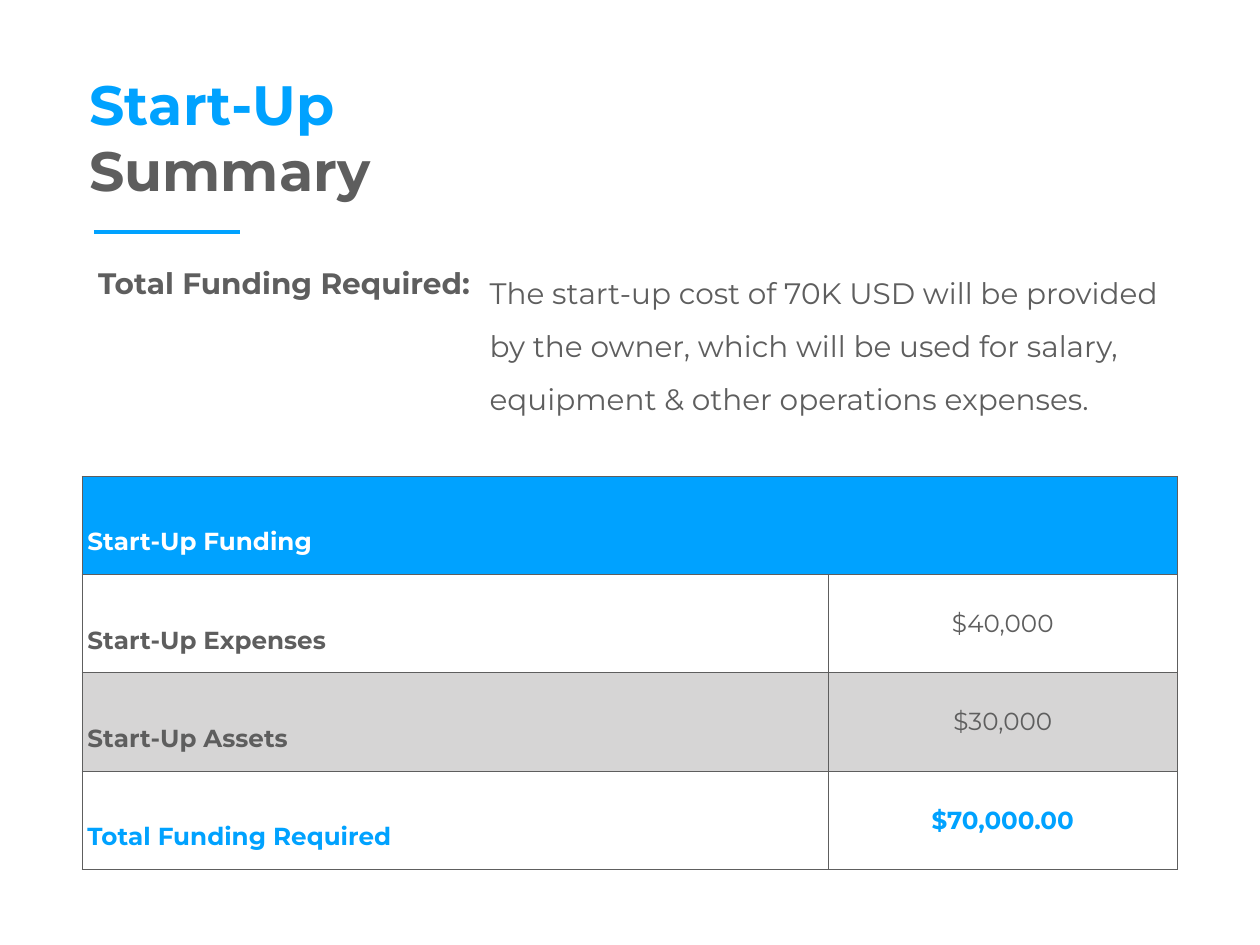
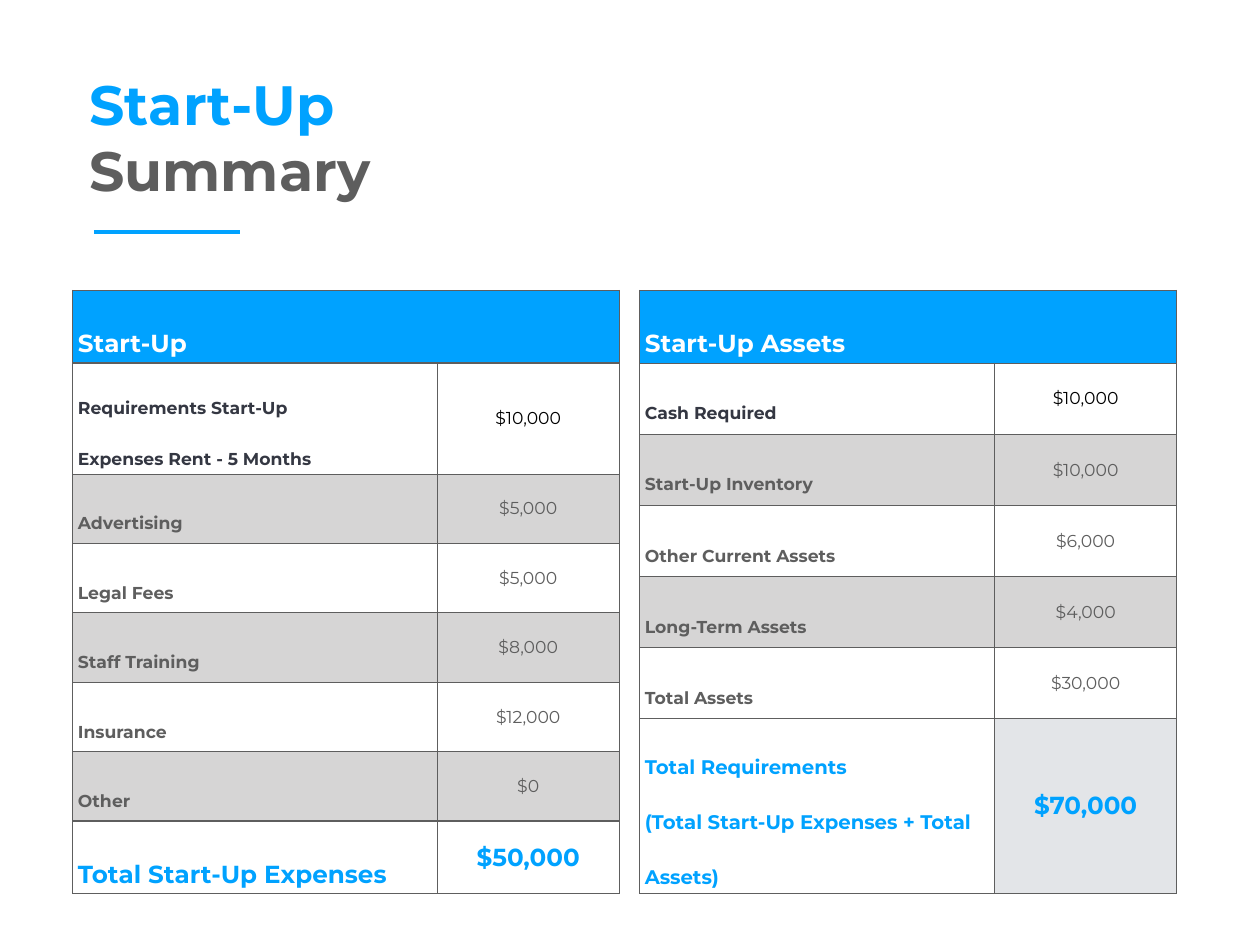
import copy
from pptx import Presentation
from pptx import util as u
from pptx.dml.color import RGBColor
from pptx.enum import shapes, text
from pptx.oxml import parse_xml
from pptx.oxml.ns import nsdecls, qn

HUES = {"blue": "00A2FF", "gray": "5E5E5E", "band": "D6D5D5", "tint": "E3E5E8",
        "white": "FFFFFF", "navy": "343742", "black": "000000"}
FACE = "Montserrat"
COLS, ROWS = 128, 96
PAD = u.Inches(0.06)
LEAD = {20: 2.1, 16: 2.31, 14: 2.43}


def hue(name):
    return RGBColor.from_string(HUES[name])


def write(para, words, size=20, color="gray", bold=False, lead=None, center=False):
    """Fill one paragraph with formatted text."""
    para.text = words
    if lead:
        para.line_spacing = lead
    if center:
        para.alignment = text.PP_ALIGN.CENTER
    for run in para.runs:
        font = run.font
        font.name, font.size, font.bold = FACE, u.Pt(size), bold
        font.color.rgb = hue(color)
    for gap in para._p.findall(qn("a:br")):
        gap.append(copy.deepcopy(para.runs[0]._r.rPr))


def border(cell, skip=""):
    """Rule the four sides of a cell, leaving out the skipped side."""
    for side in "LRTB":
        paint = "<a:noFill/>" if side == skip else (
            f'<a:solidFill><a:srgbClr val="{HUES["gray"]}"/></a:solidFill>')
        cell._tc.get_or_add_tcPr().append(parse_xml(
            f'<a:ln{side} {nsdecls("a")} w="12700">{paint}</a:ln{side}>'))


class Deck:
    """Shared style and the current slide."""

    def __init__(self):
        self.show = Presentation()
        self.show.slide_width = u.Inches(14.22)
        self.show.slide_height = u.Inches(10.67)
        self.page = None

    def x(self, cols):
        return round(self.show.slide_width * cols / COLS)

    def y(self, rows):
        return round(self.show.slide_height * rows / ROWS)

    def slide(self):
        self.page = self.show.slides.add_slide(self.show.slide_layouts[6]).shapes
        self.box(8.55, 6.5, 29.7, 14.75, ("Start-Up", dict(size=45, color="blue", bold=True)),
                 ("Summary", dict(size=45, bold=True)))
        self.rule(9.55, 24.4, 23.6)

    def box(self, left, top, wide, high, *lines):
        frame = self.page.add_textbox(self.x(left), self.y(top),
                                      self.x(wide), self.y(high)).text_frame
        frame.word_wrap = True
        frame.vertical_anchor = text.MSO_ANCHOR.MIDDLE
        frame.margin_left = frame.margin_right = PAD
        frame.margin_top = frame.margin_bottom = PAD
        for i, (words, form) in enumerate(lines):
            write(frame.add_paragraph() if i else frame.paragraphs[0], words, **form)

    def rule(self, start, end, top):
        line = self.page.add_connector(shapes.MSO_CONNECTOR.STRAIGHT, self.x(start),
                                       self.y(top), self.x(end), self.y(top))
        line.line.color.rgb, line.line.width = hue("blue"), u.Pt(3)
        line._element.spPr.append(parse_xml(f'<a:effectLst {nsdecls("a")}/>'))

    def cell(self, cell, words, fill, skip="", **form):
        border(cell, skip)
        cell.fill.solid()
        cell.fill.fore_color.rgb = hue(fill)
        cell.vertical_anchor = text.MSO_ANCHOR.MIDDLE
        cell.margin_left = cell.margin_right = PAD
        cell.margin_top = cell.margin_bottom = PAD
        if words:
            write(cell.text_frame.paragraphs[0], words, **form)

    def table(self, left, top, wide, high, head, rows, size=14, dark=True,
              sum_size=20, sum_fill="white"):
        """Draw a header, banded rows and a closing total."""
        grid = self.page.add_table(len(rows) + 1, 2, self.x(left), self.y(top),
                                   self.x(sum(wide)), self.y(sum(high))).table
        grid.first_row = grid.horz_banding = False
        for col, span in zip(grid.columns, wide):
            col.width = self.x(span)
        for row, span in zip(grid.rows, high):
            row.height = self.y(span)
        self.cell(grid.cell(0, 0), head, "blue", "R", color="white", bold=True, lead=LEAD[20])
        self.cell(grid.cell(0, 1), "", "blue", "L")
        for i, (label, cost) in enumerate(rows, 1):
            last = i == len(rows)
            tone = "blue" if last else "gray"
            inks = ("navy", "black") if dark and i == 1 else (tone, tone)
            fill = "white" if last or i % 2 else "band"
            tall = sum_size if last else size
            self.cell(grid.cell(i, 0), label, fill, size=tall, color=inks[0],
                      bold=True, lead=LEAD[tall])
            self.cell(grid.cell(i, 1), cost, sum_fill if last else fill,
                      size=20 if last else size, color=inks[1], bold=last, center=True)


def main():
    deck = Deck()
    deck.slide()
    deck.box(9.43, 26.4, 40, 4.6, ("Total Funding Required:", dict(size=24, bold=True)))
    deck.box(49.2, 26.45, 70.1, 15.5, (
        "The start-up cost of 70K USD will be provided by the owner, which will be used "
        "for salary, equipment & other operations expenses.", dict(size=24, lead=1.5)))
    deck.table(8.35, 48.4, (75.82, 35.42), [9.98] * 4, "Start-Up Funding", [
        ("Start-Up Expenses", "$40,000"),
        ("Start-Up Assets", "$30,000"),
        ("Total Funding Required", "$70,000.00")], size=20, dark=False)

    deck.slide()
    deck.table(7.37, 29.5, (37.07, 18.45), [7.05, 9.1] + [7.05] * 6, "Start-Up", [
        ("Requirements Start-Up\nExpenses Rent - 5 Months", "$10,000"),
        ("Advertising", "$5,000"),
        ("Legal Fees", "$5,000"),
        ("Staff Training", "$8,000"),
        ("Insurance", "$12,000"),
        ("Other", "$0"),
        ("Total Start-Up Expenses", "$50,000")])
    deck.table(64.97, 29.5, (36.1, 18.45), [7.4] + [7.22] * 5 + [17.75], "Start-Up Assets", [
        ("Cash Required", "$10,000"),
        ("Start-Up Inventory", "$10,000"),
        ("Other Current Assets", "$6,000"),
        ("Long-Term Assets", "$4,000"),
        ("Total Assets", "$30,000"),
        ("Total Requirements\n(Total Start-Up Expenses + Total Assets)", "$70,000")],
        sum_size=16, sum_fill="tint")
    deck.show.save("out.pptx")


if __name__ == "__main__":
    main()
